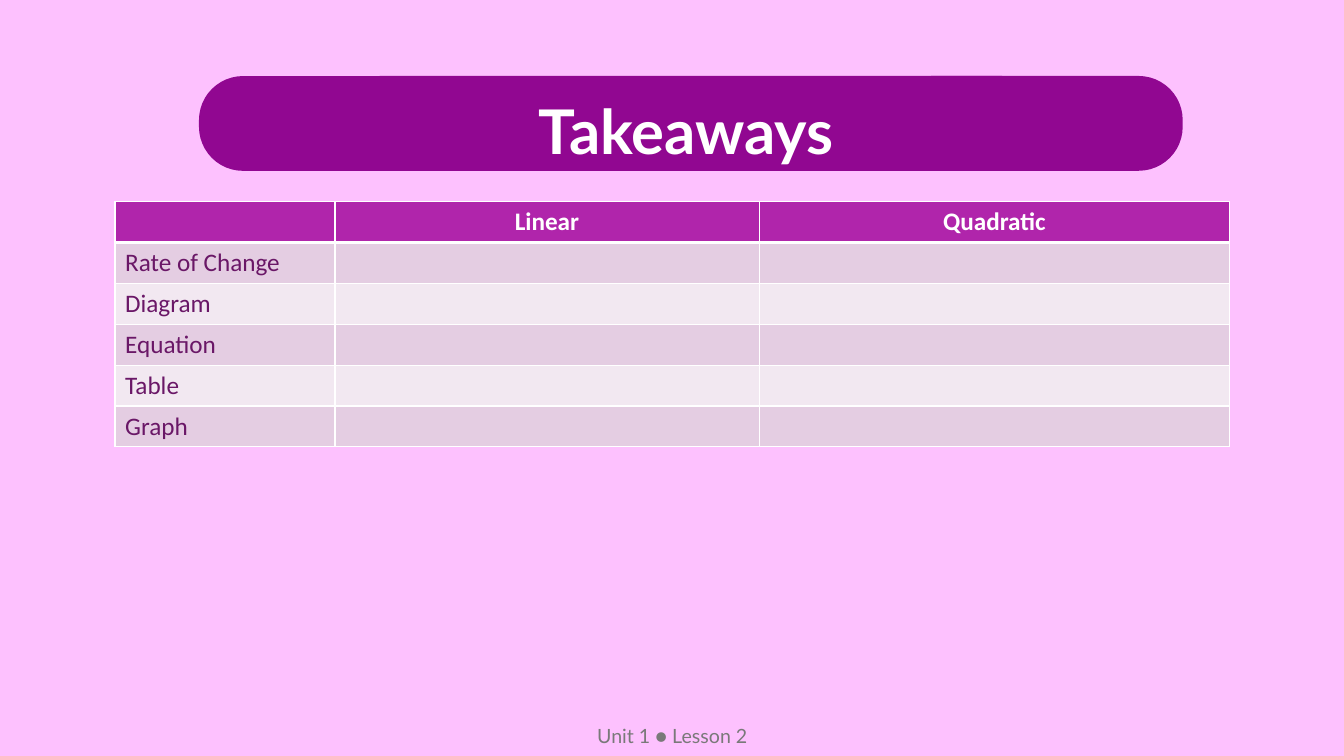
from dataclasses import dataclass

from lxml import etree
from pptx import Presentation
from pptx.dml.color import RGBColor
from pptx.enum.shapes import MSO_SHAPE
from pptx.enum.text import MSO_ANCHOR, PP_ALIGN
from pptx.oxml.ns import qn
from pptx.util import Cm, Pt

ROUND_TOP = MSO_SHAPE.ROUND_2_SAME_RECTANGLE
TOP, MIDDLE = MSO_ANCHOR.TOP, MSO_ANCHOR.MIDDLE
LEFT, CENTER = PP_ALIGN.LEFT, PP_ALIGN.CENTER


@dataclass(frozen=True)
class Theme:
    background: str = "FDC1FE"
    banner: str = "910791"
    header: str = "B025AB"
    dark_band: str = "E4CDE2"
    light_band: str = "F2E8F1"
    label: str = "6A1767"
    footer: str = "797979"
    white: str = "FFFFFF"
    heading_font: str = "Lato"
    table_font: str = "Calibri"
    title_size: int = 44
    table_size: int = 18
    footer_size: int = 14
    thin_border: int = 1
    thick_border: int = 3


THEME = Theme()


@dataclass(frozen=True)
class TextStyle:
    font: str
    size: int
    color: str
    bold: bool = False
    align: PP_ALIGN = CENTER
    anchor: MSO_ANCHOR = TOP


@dataclass(frozen=True)
class Label:
    text: str
    left: float
    top: float
    width: float
    height: float
    style: TextStyle


@dataclass(frozen=True)
class BannerHalf:
    left: float
    rotation: int


TITLE_STYLE = TextStyle(THEME.heading_font, THEME.title_size, THEME.white, True)
FOOTER_STYLE = TextStyle(THEME.heading_font, THEME.footer_size, THEME.footer, anchor=MIDDLE)
HEADER_STYLE = TextStyle(THEME.table_font, THEME.table_size, THEME.white, True)
BODY_STYLE = TextStyle(THEME.table_font, THEME.table_size, THEME.label, align=LEFT, anchor=MIDDLE)

BANNER_HALVES = (BannerHalf(18.49, 90), BannerHalf(13.94, 270))
LABELS = (
    Label("Takeaways", 3.84, 2.21, 26.92, 2.13, TITLE_STYLE),
    Label("Unit 1 ● Lesson 2", 11.23, 18.03, 11.43, 1.02, FOOTER_STYLE),
)
ROWS = (
    ("", "Linear", "Quadratic"),
    ("Rate of Change", "", ""),
    ("Diagram", "", ""),
    ("Equation", "", ""),
    ("Table", "", ""),
    ("Graph", "", ""),
)
COLUMN_WIDTHS = (5.54, 10.69, 11.86)
ROW_HEIGHT = 1.03


def style_paragraph(para, style: TextStyle) -> None:
    para.alignment = style.align
    para.font.name = style.font
    para.font.size = Pt(style.size)
    para.font.bold = style.bold
    para.font.color.rgb = RGBColor.from_string(style.color)


def add_banner_half(page, half: BannerHalf) -> None:
    shape = page.shapes.add_shape(ROUND_TOP, Cm(half.left), Cm(-7.01), Cm(2.39), Cm(20.24))
    shape.rotation = half.rotation
    shape.adjustments[0] = 0.465
    shape.adjustments[1] = 0
    shape.shadow.inherit = False
    shape.fill.solid()
    shape.fill.fore_color.rgb = RGBColor.from_string(THEME.banner)
    shape.line.fill.background()


def add_label(page, label: Label) -> None:
    box = page.shapes.add_textbox(
        Cm(label.left), Cm(label.top), Cm(label.width), Cm(label.height)
    )
    frame = box.text_frame
    frame.word_wrap = True
    frame.vertical_anchor = label.style.anchor
    frame.text = label.text
    style_paragraph(frame.paragraphs[0], label.style)


def add_border(cell, side: str, width: int) -> None:
    properties = cell._tc.get_or_add_tcPr()
    line = etree.SubElement(properties, qn(f"a:ln{side}"), w=str(Pt(width)))
    fill = etree.SubElement(line, qn("a:solidFill"))
    etree.SubElement(fill, qn("a:srgbClr"), val=THEME.white)


def fill_cell(cell, text: str, row: int) -> None:
    is_header = row == 0
    style = HEADER_STYLE if is_header else BODY_STYLE
    cell.text = text
    cell.vertical_anchor = style.anchor
    style_paragraph(cell.text_frame.paragraphs[0], style)
    thick_side = {0: "B", 1: "T"}.get(row)
    for side in "LRTB":
        add_border(cell, side, THEME.thick_border if side == thick_side else THEME.thin_border)
    band = THEME.dark_band if row % 2 else THEME.light_band
    cell.fill.solid()
    cell.fill.fore_color.rgb = RGBColor.from_string(THEME.header if is_header else band)


def add_comparison_table(page) -> None:
    table = page.shapes.add_table(
        len(ROWS), len(COLUMN_WIDTHS), Cm(2.9), Cm(5.08),
        Cm(sum(COLUMN_WIDTHS)), Cm(ROW_HEIGHT * len(ROWS)),
    ).table
    for column, width in zip(table.columns, COLUMN_WIDTHS):
        column.width = Cm(width)
    for row, texts in enumerate(ROWS):
        table.rows[row].height = Cm(ROW_HEIGHT)
        for column, text in enumerate(texts):
            fill_cell(table.cell(row, column), text, row)


def main() -> None:
    deck = Presentation()
    deck.slide_width, deck.slide_height = Cm(33.87), Cm(19.05)
    page = deck.slides.add_slide(deck.slide_layouts[6])
    page.background.fill.solid()
    page.background.fill.fore_color.rgb = RGBColor.from_string(THEME.background)
    for half in BANNER_HALVES:
        add_banner_half(page, half)
    add_comparison_table(page)
    for label in LABELS:
        add_label(page, label)
    deck.save("out.pptx")


if __name__ == "__main__":
    main()
